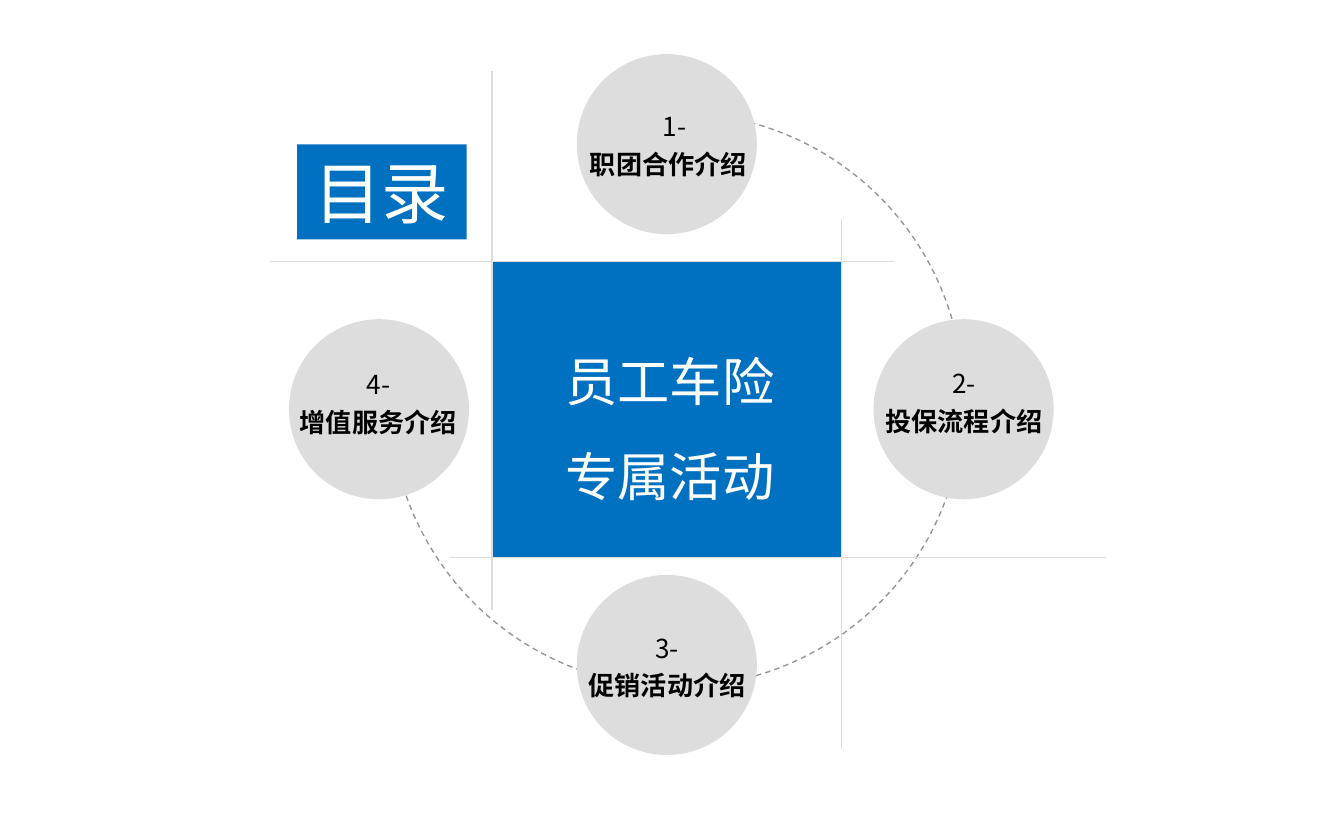
from lxml.etree import SubElement
from pptx import Presentation
from pptx.dml.color import RGBColor
from pptx.enum.dml import MSO_LINE
from pptx.enum.shapes import MSO_CONNECTOR, MSO_SHAPE
from pptx.enum.text import MSO_ANCHOR, PP_ALIGN
from pptx.oxml.ns import qn
from pptx.util import Pt

COLORS = {"blue": "0070C0", "grey": "DDDDDD", "dash": "969696",
          "white": "FFFFFF", "black": "000000"}
BODY_FONT = "Noto Sans CJK SC"
DIAMETER = 96.5
TOPICS = [
    ("1-", "职团合作介绍", (309, 29), (309, 52.5, 105), PP_ALIGN.LEFT),
    ("2-", "投保流程介绍", (468, 171), (460, 190.3, 113), PP_ALIGN.CENTER),
    ("3-", "促销活动介绍", (309, 308), (301, 332, 113), PP_ALIGN.CENTER),
    ("4-", "增值服务介绍", (154.8, 171), (146.2, 190.8, 113), PP_ALIGN.CENTER),
]
GRID_LINES = [
    (263.5, 38, 263.5, 327),
    (450.7, 117.5, 450.7, 401),
    (144.7, 140, 479, 140),
    (241, 298.6, 592.6, 298.6),
]


def color(name):
    """Return the named colour."""
    return RGBColor.from_string(COLORS[name])


def add_filled(slide, kind, box, fill):
    """Add a plain filled shape in the box."""
    shape = slide.shapes.add_shape(kind, *map(Pt, box))
    shape.shadow.inherit = False
    shape.fill.solid()
    shape.fill.fore_color.rgb = color(fill)
    shape.line.fill.background()
    return shape


def style_paragraph(paragraph, size, ink, font=BODY_FONT, bold=False,
                    align=PP_ALIGN.CENTER, spacing=None):
    """Format a whole paragraph."""
    paragraph.alignment = align
    paragraph.line_spacing = spacing
    paragraph.font.name = font
    paragraph.font.size = Pt(size)
    paragraph.font.bold = bold
    paragraph.font.color.rgb = color(ink)
    east_asian = SubElement(paragraph.font._element, qn("a:ea"))
    east_asian.set("typeface", BODY_FONT)


def add_lines(slide, box, lines):
    """Add a wrapping text box and return its paragraphs."""
    frame = slide.shapes.add_textbox(*map(Pt, box)).text_frame
    frame.word_wrap = True
    frame.text = "\n".join(lines)
    return frame.paragraphs


def add_title(slide, box):
    """Turn the title placeholder into the blue contents tag."""
    title = slide.shapes.title
    title.left, title.top, title.width, title.height = map(Pt, box)
    title.fill.solid()
    title.fill.fore_color.rgb = color("blue")
    title.text_frame.text = "目录"
    title.text_frame.vertical_anchor = MSO_ANCHOR.MIDDLE
    style_paragraph(title.text_frame.paragraphs[0], 36, "white", font="Cabin")


def add_orbit(slide, box, start, end):
    """Add the dashed arc that runs clockwise between two angles in degrees."""
    orbit = slide.shapes.add_shape(MSO_SHAPE.ARC, *map(Pt, box))
    orbit.shadow.inherit = False
    orbit.fill.background()
    orbit.line.color.rgb = color("dash")
    orbit.line.width = Pt(0.75)
    orbit.line.dash_style = MSO_LINE.DASH
    orbit.adjustments[0] = start * 0.6
    orbit.adjustments[1] = end * 0.6


def add_grid_line(slide, ends):
    """Add one thin grey line."""
    line = slide.shapes.add_connector(MSO_CONNECTOR.STRAIGHT, *map(Pt, ends))
    line.line.color.rgb = color("grey")
    line.line.width = Pt(0.75)
    SubElement(line._element.spPr, qn("a:effectLst"))


def add_centre(slide, box):
    """Add the blue block with the campaign name."""
    left, top, width, height = box
    add_filled(slide, MSO_SHAPE.RECTANGLE, box, "blue")
    text_box = (left + 20.9, top + 27, 148.3, 108.7)
    for paragraph in add_lines(slide, text_box, ["员工车险", "专属活动"]):
        style_paragraph(paragraph, 28, "white", spacing=1.5)


def add_topic(slide, box, number, name, label_box, name_align):
    """Add a grey disc with its number and topic name."""
    add_filled(slide, MSO_SHAPE.OVAL, box, "grey")
    heading, topic = add_lines(slide, label_box, [number, name])
    style_paragraph(heading, 14, "black", spacing=Pt(20))
    style_paragraph(topic, 14, "black", bold=True, align=name_align, spacing=Pt(20))


def main():
    """Build the contents slide."""
    deck = Presentation()
    deck.slide_width, deck.slide_height = Pt(720), Pt(450)
    slide = deck.slides.add_slide(deck.slide_layouts[5])
    add_title(slide, (159.2, 77.3, 90.8, 51))
    add_orbit(slide, (208.8, 60.5, 307.5, 307.5), 282.9, 164.4)
    add_centre(slide, (263.8, 140, 186.9, 158.5))
    for ends in GRID_LINES:
        add_grid_line(slide, ends)
    for number, name, (left, top), (x, y, width), align in TOPICS:
        add_topic(slide, (left, top, DIAMETER, DIAMETER), number, name,
                  (x, y, width, 47.5), align)
    deck.save("out.pptx")


if __name__ == "__main__":
    main()
